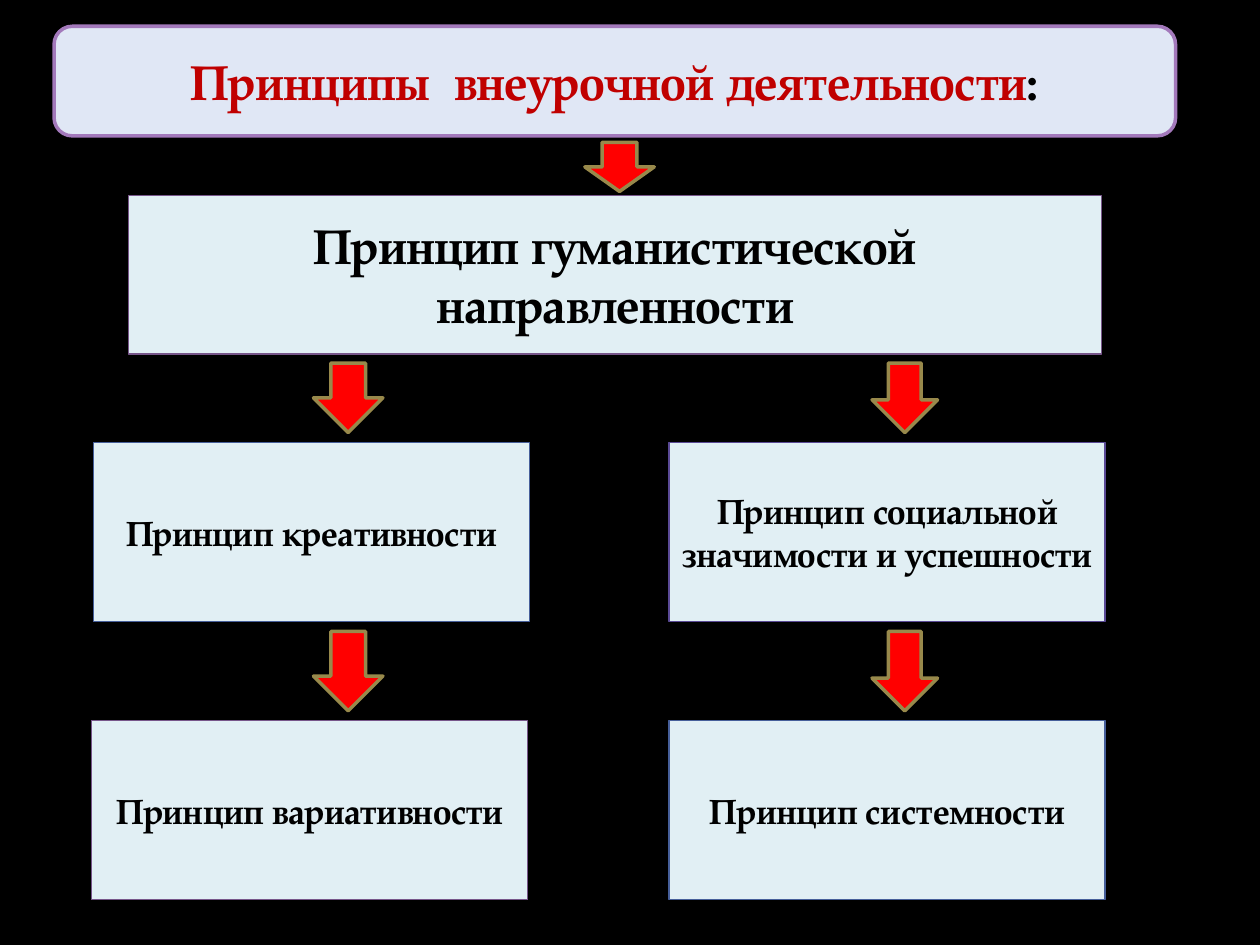
from typing import NamedTuple

from pptx import Presentation
from pptx.dml.color import RGBColor
from pptx.enum.shapes import MSO_SHAPE
from pptx.enum.text import MSO_ANCHOR, PP_ALIGN
from pptx.shapes.autoshape import Shape
from pptx.slide import Slide
from pptx.util import Cm, Pt

FONT = "TeX Gyre Pagella"
BLACK = RGBColor(0x00, 0x00, 0x00)
DARK_RED = RGBColor(0xC0, 0x00, 0x00)
RED = RGBColor(0xFF, 0x00, 0x00)
OLIVE = RGBColor(0x98, 0x89, 0x4B)
LAVENDER = RGBColor(0xE0, 0xE7, 0xF5)
LILAC = RGBColor(0xA3, 0x79, 0xBB)
PALE_BLUE = RGBColor(0xE1, 0xEF, 0xF4)
BLUE = RGBColor(0x46, 0x5F, 0x9A)
VIOLET = RGBColor(0x5A, 0x4A, 0x96)
PLUM = RGBColor(0x77, 0x56, 0x8A)


class Area(NamedTuple):
    """Position and size in centimetres."""
    left: float
    top: float
    width: float
    height: float


class Principle(NamedTuple):
    text: str
    area: Area
    line_color: RGBColor
    font_size: int = 20


BOX_WIDTH, BOX_HEIGHT = 8.79, 3.61
RIGHT_BOX_LEFT = 13.49
UPPER_ROW, LOWER_ROW = 8.92, 14.53

TITLE_AREA = Area(1.09, 0.53, 22.61, 2.21)
PRINCIPLES = [
    Principle("Принцип гуманистической направленности",
              Area(2.59, 3.94, 19.61, 3.2), PLUM, 28),
    Principle("Принцип креативности",
              Area(1.88, UPPER_ROW, BOX_WIDTH, BOX_HEIGHT), BLUE),
    Principle("Принцип социальной значимости и успешности",
              Area(RIGHT_BOX_LEFT, UPPER_ROW, BOX_WIDTH, BOX_HEIGHT), VIOLET),
    Principle("Принцип вариативности",
              Area(1.85, LOWER_ROW, BOX_WIDTH, BOX_HEIGHT), PLUM),
    Principle("Принцип системности",
              Area(RIGHT_BOX_LEFT, LOWER_ROW, BOX_WIDTH, BOX_HEIGHT), BLUE),
]

ARROW_COLUMNS = [(6.32, 1.4), (17.58, 1.32)]  # left, width
ARROW_ROWS = [(7.32, 1.4), (12.73, 1.6)]  # top, height
ARROWS = [Area(11.79, 2.87, 1.4, 0.99)] + [
    Area(left, top, width, height)
    for top, height in ARROW_ROWS
    for left, width in ARROW_COLUMNS
]


def add_filled_shape(slide: Slide, kind: MSO_SHAPE, area: Area, fill: RGBColor,
                     line: RGBColor, line_width: float) -> Shape:
    shape = slide.shapes.add_shape(kind, *(Cm(length) for length in area))
    shape.shadow.inherit = False
    shape.fill.solid()
    shape.fill.fore_color.rgb = fill
    shape.line.color.rgb = line
    shape.line.width = Pt(line_width)
    return shape


def format_text(shape: Shape, size: int) -> None:
    text_frame = shape.text_frame
    text_frame.word_wrap = True
    text_frame.vertical_anchor = MSO_ANCHOR.MIDDLE
    for paragraph in text_frame.paragraphs:
        paragraph.alignment = PP_ALIGN.CENTER
        for run in paragraph.runs:
            run.font.name = FONT
            run.font.size = Pt(size)
            run.font.bold = True
            run.font.color.rgb = BLACK


def add_title(slide: Slide) -> None:
    shape = add_filled_shape(slide, MSO_SHAPE.ROUNDED_RECTANGLE, TITLE_AREA,
                             LAVENDER, LILAC, 2)
    paragraph = shape.text_frame.paragraphs[0]
    paragraph.text = "Принципы  внеурочной деятельности"
    paragraph.add_run().text = ":"
    format_text(shape, 28)
    paragraph.runs[0].font.color.rgb = DARK_RED


def add_principle(slide: Slide, principle: Principle) -> None:
    shape = add_filled_shape(slide, MSO_SHAPE.RECTANGLE, principle.area,
                             PALE_BLUE, principle.line_color, 0.75)
    shape.text_frame.text = principle.text
    format_text(shape, principle.font_size)


def main() -> None:
    presentation = Presentation()
    presentation.slide_width = Cm(25.4)
    presentation.slide_height = Cm(19.05)
    slide = presentation.slides.add_slide(presentation.slide_layouts[6])
    slide.background.fill.solid()
    slide.background.fill.fore_color.rgb = BLACK

    add_title(slide)
    for principle in PRINCIPLES:
        add_principle(slide, principle)
    for area in ARROWS:
        add_filled_shape(slide, MSO_SHAPE.DOWN_ARROW, area, RED, OLIVE, 2)

    presentation.save("out.pptx")


if __name__ == "__main__":
    main()
